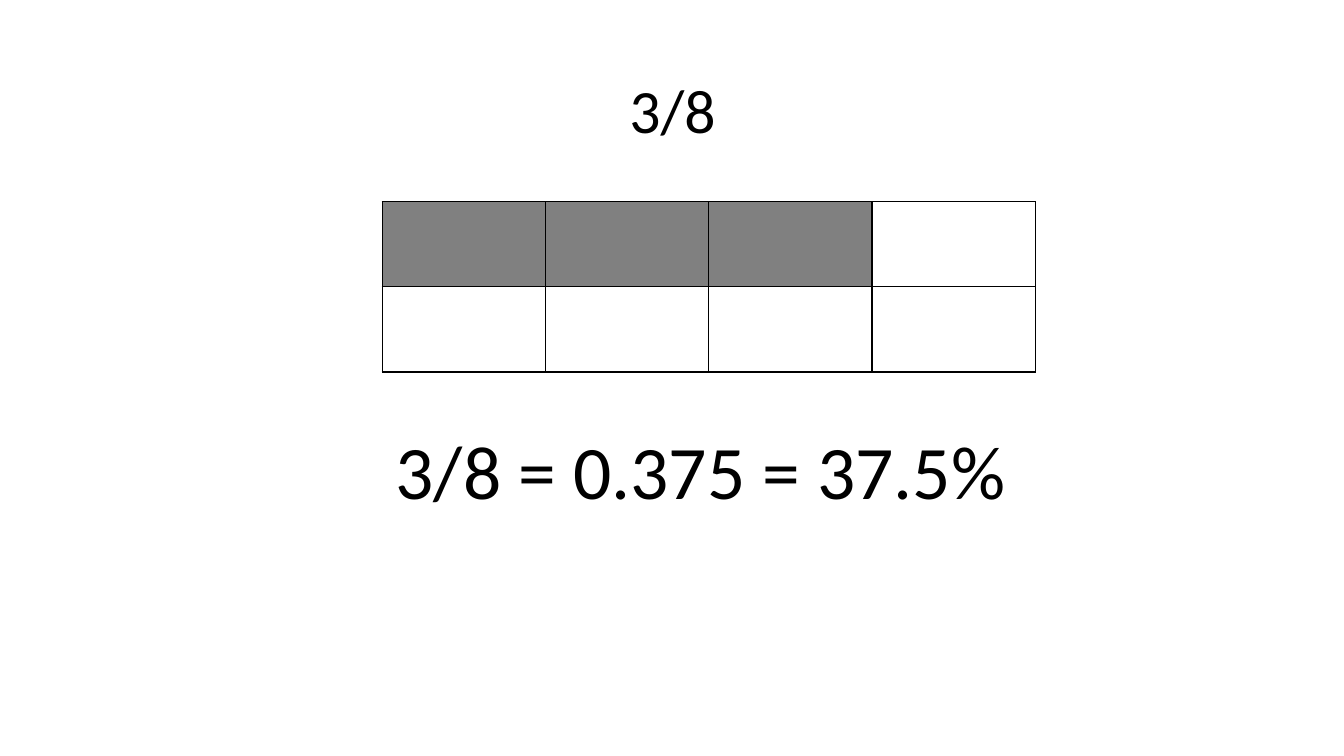
"""Build a slide that shows 3/8 as a shaded grid, a decimal and a percentage."""
from lxml.etree import SubElement
from pptx import Presentation
from pptx.dml.color import RGBColor
from pptx.enum.text import MSO_ANCHOR as Anchor, PP_ALIGN as Align
from pptx.oxml.ns import qn
from pptx.util import Inches, Pt

COLORS = {"ink": "000000", "shaded": "808080", "empty": "FFFFFF"}
COLUMNS, ROWS, SHADED = 4, 2, 3
CELL_WIDTH, CELL_HEIGHT = Inches(1.62), Inches(0.845)

presentation = Presentation()
presentation.slide_width = Inches(13.33)
presentation.slide_height = Inches(7.5)
slide = presentation.slides.add_slide(presentation.slide_layouts[6])


def add_text(text, left, top, width, height, size, anchor=Anchor.TOP, spacing=1.0):
    shape = slide.shapes.add_textbox(*map(Inches, (left, top, width, height)))
    frame = shape.text_frame
    frame.word_wrap = True
    frame.vertical_anchor = anchor
    paragraph = frame.paragraphs[0]
    paragraph.alignment = Align.CENTER
    paragraph.line_spacing = spacing
    run = paragraph.add_run()
    run.text = text
    run.font.name = "Calibri"
    run.font.size = Pt(size)
    run.font.color.rgb = RGBColor.from_string(COLORS["ink"])


add_text("3/8", 0.92, 0.4, 11.5, 1.45, size=44, anchor=Anchor.MIDDLE, spacing=0.9)

table = slide.shapes.add_table(
    ROWS, COLUMNS, Inches(3.79), Inches(2),
    COLUMNS * CELL_WIDTH, ROWS * CELL_HEIGHT).table
table.first_row = table.horz_banding = False
for column in table.columns:
    column.width = CELL_WIDTH
for row in table.rows:
    row.height = CELL_HEIGHT

for index, cell in enumerate(table.iter_cells()):
    properties = cell._tc.get_or_add_tcPr()
    for side in ("lnL", "lnR", "lnT", "lnB"):
        border = SubElement(properties, qn(f"a:{side}"), w=str(Pt(1)))
        border_fill = SubElement(border, qn("a:solidFill"))
        SubElement(border_fill, qn("a:srgbClr"), val=COLORS["ink"])
    cell.fill.solid()
    color = COLORS["shaded" if index < SHADED else "empty"]
    cell.fill.fore_color.rgb = RGBColor.from_string(color)

add_text("3/8 = 0.375 = 37.5%", 2.5, 4.16, 8.9, 1.01, size=54)

presentation.save("out.pptx")
